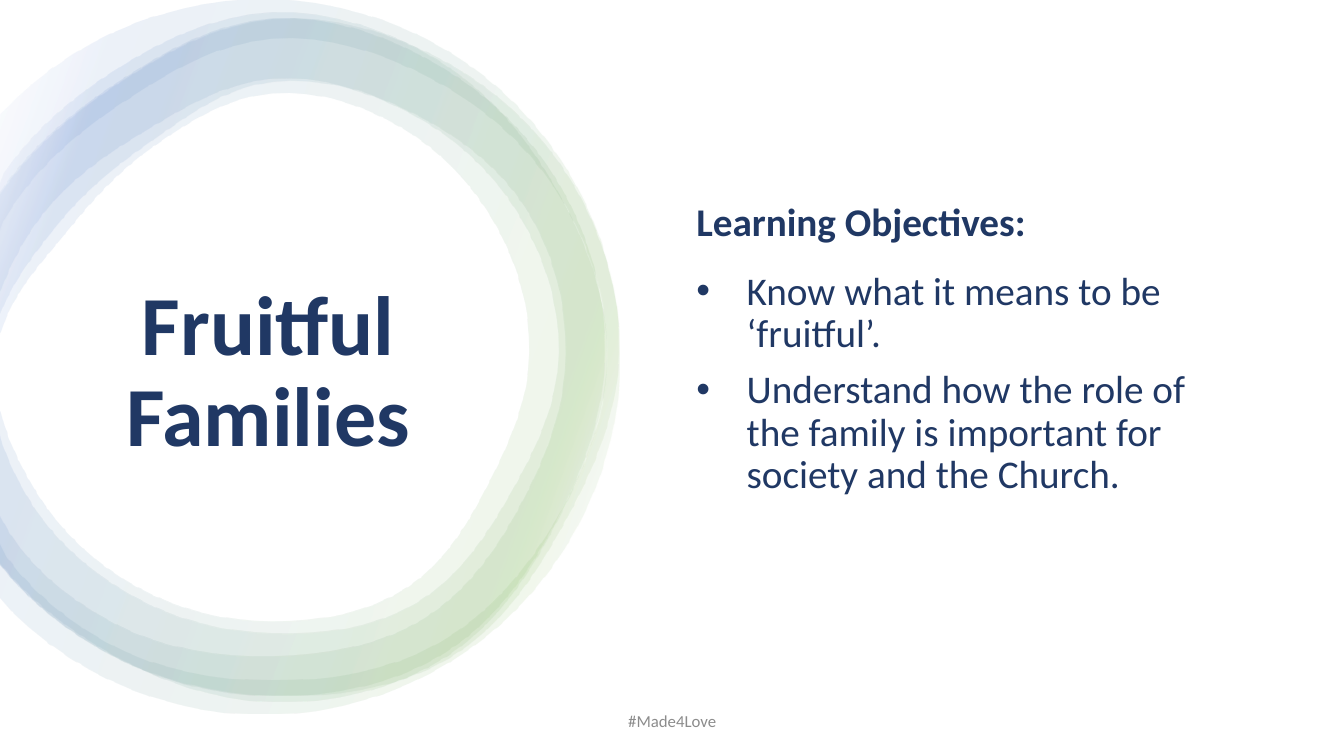
import math

import lxml.etree
import pptx
import pptx.dml.color
import pptx.enum.shapes
import pptx.enum.text
import pptx.oxml.ns
import pptx.util

Pt = pptx.util.Pt
ALIGN = pptx.enum.text.PP_ALIGN
ANCHOR = pptx.enum.text.MSO_ANCHOR
qn = pptx.oxml.ns.qn
FONT = "Calibri"
NAVY = "203864"
GREY = "8C8C8C"
WHITE = "FFFFFF"
RING_STOPS = [(2, WHITE), (16, "70AD47"), (85, "4472C4"), (100, WHITE)]
RING_OPACITY = 10
RING_ANGLE = 200
CENTER_X, CENTER_Y = 194.4, 252
LEFT_EDGE = -1.4
RADIUS_UNIT = 0.72
STEPS = 8  # curve points between two neighbouring radii

# Outer and inner radii of each ring, every 30 degrees clockwise from the right
RINGS = [
    ([332, 328, 347, 346, 338, 340, 320, 320, 320, 337, 333, 325],
     [291, 288, 303, 300, 310, 314, 285, 266, 253, 271, 275, 289]),
    ([344, 335, 350, 340, 340, 342, 330, 313, 308, 331, 336, 342],
     [284, 274, 286, 278, 278, 282, 280, 249, 242, 269, 274, 280]),
    ([330, 327, 343, 340, 340, 342, 330, 314, 309, 331, 329, 330],
     [255, 250, 268, 266, 268, 272, 274, 237, 236, 257, 257, 255]),
    ([345, 348, 353, 358, 362, 364, 363, 360, 355, 350, 346, 344],
     [332, 326, 331, 324, 330, 330, 310, 295, 289, 311, 314, 324]),
]


def ring_edge(radii):
    """Return a smooth closed edge, from the left clockwise, cut at the slide's left side."""
    count = len(radii)
    points = []
    for position in range(count * STEPS + 1):
        index, step = divmod(position + count * STEPS // 2, STEPS)
        t = step / STEPS
        a, b, c, d = (radii[(index + offset) % count] for offset in (-1, 0, 1, 2))
        radius = b + t / 2 * (c - a + t * (2*a - 5*b + 4*c - d + t * (3*b - a - 3*c + d)))
        angle = math.tau * (index + t) / count
        x = CENTER_X + radius * RADIUS_UNIT * math.cos(angle)
        y = CENTER_Y + radius * RADIUS_UNIT * math.sin(angle)
        points.append((Pt(max(x, LEFT_EDGE)), Pt(y)))
    return points


def add_text(text, left, top, width, height, size, color=NAVY, bold=False, align=ALIGN.LEFT,
             anchor=ANCHOR.BOTTOM, spacing=0.9, bottom=3.6, bullets=()):
    """Add a text box: one leading paragraph, then optional (text, space before) bullets."""
    box = slide.shapes.add_textbox(Pt(left), Pt(top), Pt(width), Pt(height))
    frame = box.text_frame
    frame.word_wrap = True
    frame.vertical_anchor = anchor
    frame.margin_bottom = Pt(bottom)
    for index, (line, space) in enumerate([(text, 0), *bullets]):
        paragraph = frame.add_paragraph() if index else frame.paragraphs[0]
        paragraph.text = line
        paragraph.alignment = align
        paragraph.line_spacing = spacing
        paragraph.space_before = Pt(space)
        for run in paragraph.runs:
            run.font.name = FONT
            run.font.size = Pt(size)
            run.font.bold = bold and index == 0
            run.font.color.rgb = pptx.dml.color.RGBColor.from_string(color)
        if index:
            properties = paragraph._p.get_or_add_pPr()
            properties.set("marL", str(Pt(36)))
            properties.set("indent", str(Pt(-36)))
            lxml.etree.SubElement(properties, qn("a:buFont"), typeface="Arial")
            lxml.etree.SubElement(properties, qn("a:buChar"), char="•")


presentation = pptx.Presentation()
presentation.slide_width = Pt(960)
presentation.slide_height = Pt(540)
slide = presentation.slides.add_slide(presentation.slide_layouts[6])

backdrop = slide.shapes.add_shape(
    pptx.enum.shapes.MSO_SHAPE.RECTANGLE, 0, 0, Pt(960), Pt(540))
backdrop.shadow.inherit = False
backdrop.fill.solid()
backdrop.fill.fore_color.rgb = pptx.dml.color.RGBColor.from_string(WHITE)
backdrop.line.fill.background()

for outer, inner in RINGS:
    outline = ring_edge(outer) + ring_edge(inner)[::-1]
    builder = slide.shapes.build_freeform(*outline[0])
    builder.add_line_segments(outline[1:], close=True)
    ring = builder.convert_to_shape()
    ring.shadow.inherit = False
    ring.line.fill.background()
    ring.fill.gradient()
    gradient = ring._element.spPr.find(qn("a:gradFill"))
    stops = gradient.find(qn("a:gsLst"))
    for stop in list(stops):
        stops.remove(stop)
    for position, color in RING_STOPS:
        stop = lxml.etree.SubElement(stops, qn("a:gs"), pos=str(position * 1000))
        tint = lxml.etree.SubElement(stop, qn("a:srgbClr"), val=color)
        lxml.etree.SubElement(tint, qn("a:alpha"), val=str(RING_OPACITY * 1000))
    gradient.find(qn("a:lin")).set("ang", str(RING_ANGLE * 60000))

add_text("#Made4Love", 318.24, 500.4, 324, 28.8, size=12, color=GREY,
         align=ALIGN.CENTER, anchor=ANCHOR.MIDDLE, spacing=1.0)
add_text("Fruitful \vFamilies ", 46.8, 204.5, 303.1, 131, size=60, bold=True,
         align=ALIGN.CENTER)
add_text("Learning Objectives:", 490.3, 126.7, 377.3, 272.2, size=28, bold=True, bottom=44,
         bullets=[("Know what it means to be ‘fruitful’.", 19),
                  ("Understand how the role of the family is important for society "
                   "and the Church.", 10)])

presentation.save("out.pptx")
